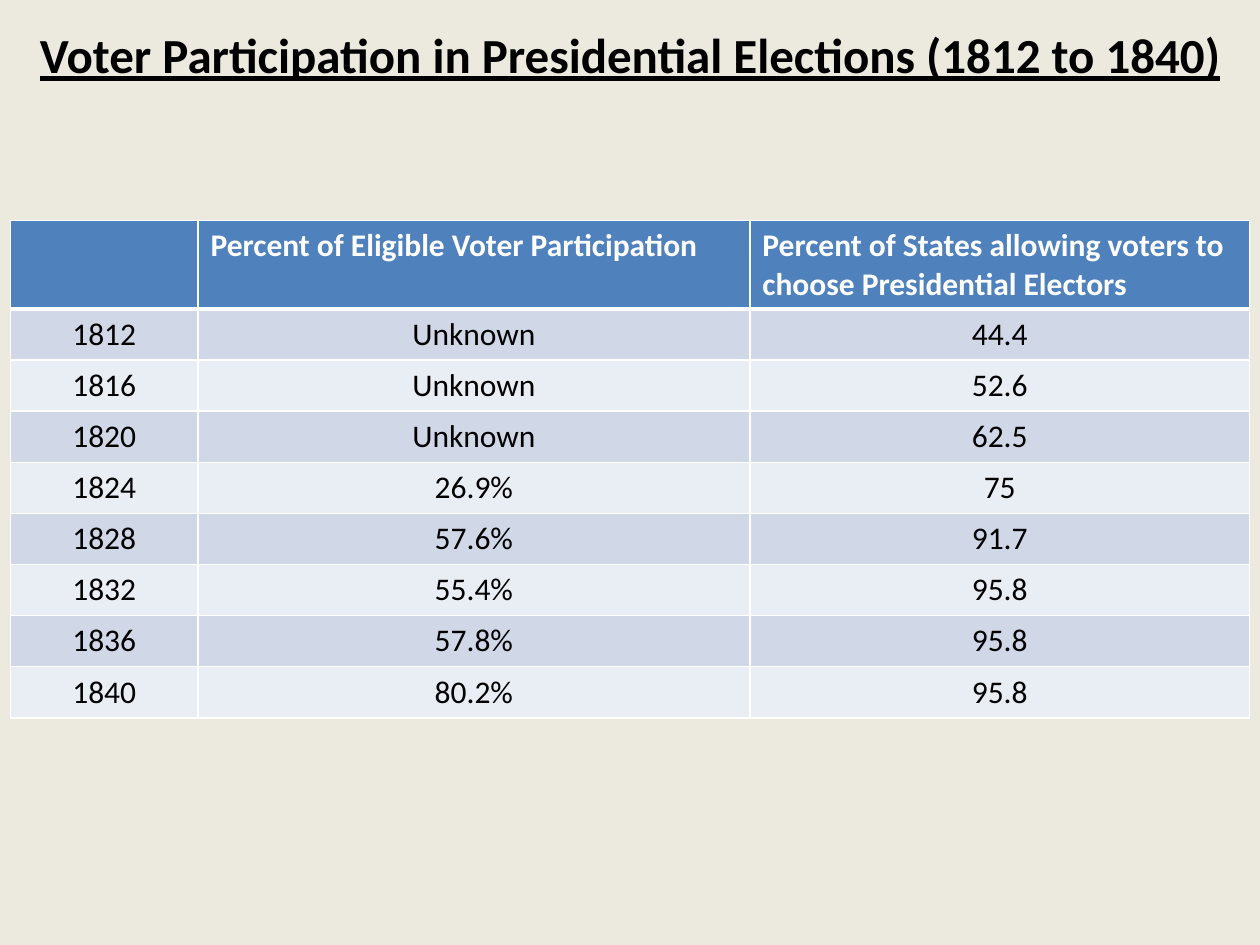
"""Build a slide with a table of voter participation from 1812 to 1840."""
from lxml import etree
from pptx import Presentation
from pptx.dml.color import RGBColor
from pptx.enum import text
from pptx.oxml import ns
from pptx.util import Pt

TITLE = "Voter Participation in Presidential Elections (1812 to 1840)"
ROWS = [
    ("", "Percent of Eligible Voter Participation",
     "Percent of States allowing voters to choose Presidential Electors"),
    ("1812", "Unknown", "44.4"),
    ("1816", "Unknown", "52.6"),
    ("1820", "Unknown", "62.5"),
    ("1824", "26.9%", "75"),
    ("1828", "57.6%", "91.7"),
    ("1832", "55.4%", "95.8"),
    ("1836", "57.8%", "95.8"),
    ("1840", "80.2%", "95.8"),
]
COLUMN_WIDTHS = (107.1, 315.4, 285.6)
HEADER_HEIGHT, ROW_HEIGHT = 50.6, 29.2
TABLE_LEFT, TABLE_TOP = 6, 126

FONT = "Calibri"
BACKGROUND = RGBColor(0xEC, 0xEA, 0xDF)
HEADER_BLUE = RGBColor(0x4F, 0x81, 0xBD)
BANDS = (RGBColor(0xE9, 0xED, 0xF4), RGBColor(0xD0, 0xD8, 0xE8))
WHITE = RGBColor(0xFF, 0xFF, 0xFF)
BLACK = RGBColor(0, 0, 0)


def style_font(font, size, color, bold):
    font.name, font.size, font.bold = FONT, Pt(size), bold
    font.color.rgb = color


def add_border(cell, side, width):
    properties = cell._tc.get_or_add_tcPr()
    line = etree.SubElement(properties, ns.qn(f"a:ln{side}"), w=str(Pt(width)))
    fill = etree.SubElement(line, ns.qn("a:solidFill"))
    etree.SubElement(fill, ns.qn("a:srgbClr"), val=str(WHITE))


def add_title(page):
    box = page.shapes.add_textbox(Pt(0), Pt(6), Pt(720), Pt(50))
    frame = box.text_frame
    frame.word_wrap = True
    frame.vertical_anchor = text.MSO_ANCHOR.MIDDLE
    frame.text = TITLE
    para = frame.paragraphs[0]
    para.alignment = text.PP_ALIGN.CENTER
    span = para.runs[0]
    style_font(span.font, 28, BLACK, True)
    span.font.underline = True


def fill_cell(cell, content, row):
    is_header = row == 0
    for side in "LRTB":
        heavy = (row, side) in ((0, "B"), (1, "T"))
        add_border(cell, side, 3 if heavy else 1)
    cell.fill.solid()
    cell.fill.fore_color.rgb = HEADER_BLUE if is_header else BANDS[row % 2]
    cell.text_frame.text = content
    para = cell.text_frame.paragraphs[0]
    para.alignment = text.PP_ALIGN.LEFT if is_header else text.PP_ALIGN.CENTER
    for span in para.runs:
        style_font(span.font, 18, WHITE if is_header else BLACK, is_header)


def add_voter_table(page):
    heights = [HEADER_HEIGHT] + [ROW_HEIGHT] * (len(ROWS) - 1)
    table = page.shapes.add_table(
        len(ROWS), len(COLUMN_WIDTHS), Pt(TABLE_LEFT), Pt(TABLE_TOP),
        Pt(sum(COLUMN_WIDTHS)), Pt(sum(heights))).table
    for column, width in zip(table.columns, COLUMN_WIDTHS):
        column.width = Pt(width)
    for row, (height, contents) in enumerate(zip(heights, ROWS)):
        table.rows[row].height = Pt(height)
        for column, content in enumerate(contents):
            fill_cell(table.cell(row, column), content, row)


def main():
    deck = Presentation()
    deck.slide_width, deck.slide_height = Pt(720), Pt(540)
    page = deck.slides.add_slide(deck.slide_layouts[6])
    page.background.fill.solid()
    page.background.fill.fore_color.rgb = BACKGROUND
    add_title(page)
    add_voter_table(page)
    deck.save("out.pptx")


if __name__ == "__main__":
    main()
